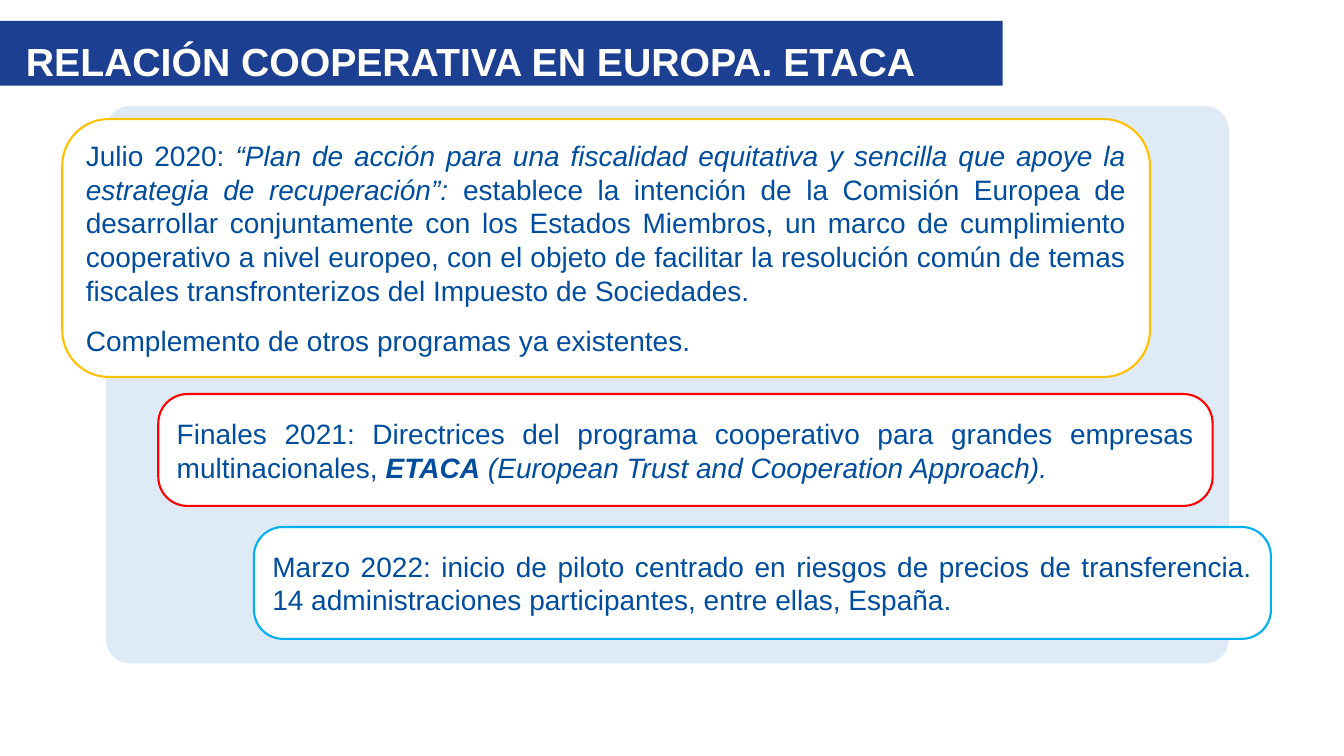
from pptx import Presentation
from pptx.dml.color import RGBColor
from pptx.enum.shapes import MSO_SHAPE
from pptx.enum.text import MSO_ANCHOR, PP_ALIGN
from pptx.util import Cm, Pt

ROUNDED = MSO_SHAPE.ROUNDED_RECTANGLE
MIDDLE = MSO_ANCHOR.MIDDLE
JUSTIFY, CENTER = PP_ALIGN.JUSTIFY, PP_ALIGN.CENTER

WHITE = RGBColor(0xFF, 0xFF, 0xFF)
PALE_BLUE = RGBColor(0xDE, 0xEB, 0xF7)
BANNER_BLUE = RGBColor(0x1C, 0x3F, 0x91)
TEXT_BLUE = RGBColor(0x00, 0x4D, 0x9D)
AMBER = RGBColor(0xFF, 0xC0, 0x00)
RED = RGBColor(0xFF, 0x00, 0x00)
SKY = RGBColor(0x00, 0xB0, 0xF0)

PLAN = [
    [("Julio 2020: ", ""),
     ("“Plan de acción para una fiscalidad equitativa y sencilla que apoye "
      "la estrategia de recuperación”: ", "i"),
     ("establece la intención de la Comisión Europea de desarrollar "
      "conjuntamente con los Estados Miembros, un marco de cumplimiento "
      "cooperativo a nivel europeo, con el objeto de facilitar la resolución "
      "común de temas fiscales transfronterizos del Impuesto de Sociedades.", "")],
    [("Complemento de otros programas ya existentes.", "")],
]
GUIDELINES = [
    [("Finales 2021: Directrices del programa cooperativo para grandes "
      "empresas multinacionales, ", ""),
     ("ETACA", "bi"),
     (" (European Trust and Cooperation Approach).", "i")],
]
PILOT = [
    [("Marzo 2022: inicio de piloto centrado en riesgos de precios de "
      "transferencia. 14 administraciones participantes, entre ellas, España.", "")],
]


def set_font(p, size, color, bold=False):
    """Set the font shared by all runs of a paragraph."""
    p.font.name = "Arial"
    p.font.size = Pt(size)
    p.font.bold = bold
    p.font.color.rgb = color


def add_panel(s, box, radius, fill, line=None):
    """Add a filled rounded rectangle, outlined if a line colour is given."""
    sp = s.shapes.add_shape(ROUNDED, *map(Cm, box))
    sp.shadow.inherit = False
    sp.adjustments[0] = radius
    sp.fill.solid()
    sp.fill.fore_color.rgb = fill
    if line is None:
        sp.line.fill.background()
    else:
        sp.line.color.rgb = line
        sp.line.width = Pt(1.5)
    return sp


def add_milestone(s, box, radius, line, paragraphs):
    """Add an outlined card with justified text."""
    tf = add_panel(s, box, radius, WHITE, line).text_frame
    tf.word_wrap = True
    tf.vertical_anchor = MIDDLE
    for i, runs in enumerate(paragraphs):
        p = tf.add_paragraph() if i else tf.paragraphs[0]
        p.alignment = JUSTIFY
        if i:
            p.space_before = Pt(12)
        set_font(p, 20, TEXT_BLUE)
        for text, style in runs:
            r = p.add_run()
            r.text = text
            if "b" in style:
                r.font.bold = True
            if "i" in style:
                r.font.italic = True


def add_title(s, box, text):
    """Add the white centred title."""
    tf = s.shapes.add_textbox(*map(Cm, box)).text_frame
    tf.word_wrap = True
    tf.margin_top = Cm(0.22)
    p = tf.paragraphs[0]
    p.alignment = CENTER
    set_font(p, 28, WHITE, bold=True)
    p.add_run().text = text


def main():
    """Build and save the slide."""
    prs = Presentation()
    prs.slide_width, prs.slide_height = Cm(33.87), Cm(19.05)
    s = prs.slides.add_slide(prs.slide_layouts[6])
    add_panel(s, (2.67, 2.67, 28.3, 14.05), 0.044, PALE_BLUE)
    add_milestone(s, (1.57, 3, 27.41, 6.5), 0.181, AMBER, PLAN)
    add_panel(s, (0, 0.53, 25.27, 1.63), 0, BANNER_BLUE)
    add_title(s, (0, 0.71, 23.72, 2.64), "RELACIÓN COOPERATIVA EN EUROPA. ETACA")
    add_milestone(s, (3.99, 9.93, 26.57, 2.82), 0.26, RED, GUIDELINES)
    add_milestone(s, (6.4, 13.28, 25.63, 2.82), 0.26, SKY, PILOT)
    prs.save("out.pptx")


if __name__ == "__main__":
    main()
